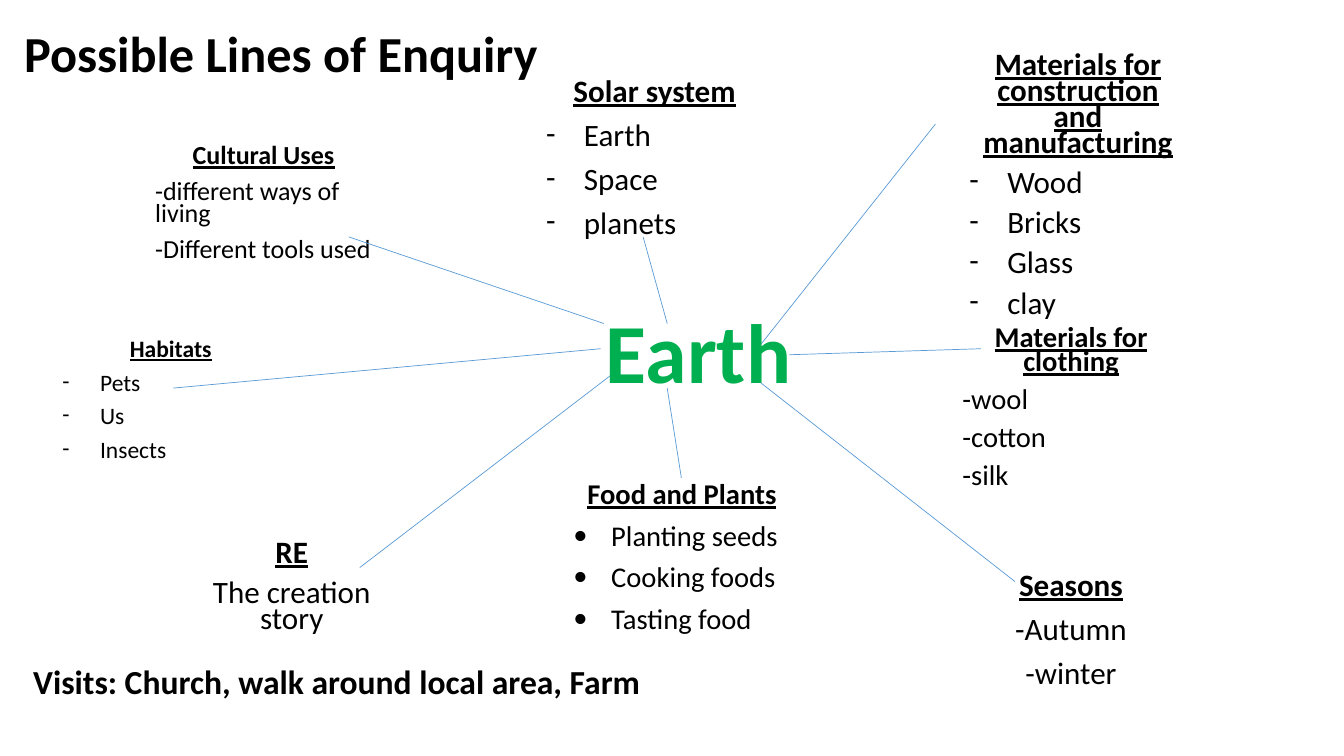
"""Build the Earth topic web: a central word, eight branches, a title and a visits line."""
from lxml import etree
from pptx import Presentation
from pptx.dml.color import RGBColor
from pptx.enum import shapes, text
from pptx.oxml.ns import qn
from pptx.util import Pt

THEME = {
    "font": "Calibri",
    "ink": RGBColor(0, 0, 0),
    "earth": RGBColor(0x00, 0xB0, 0x50),
    "line": RGBColor(0x5B, 0x9B, 0xD5),
    "earth_size": 60,
    "title_size": 36,
    "visits_size": 24,
    "line_width": 0.5,
    "space_before": 10,
    "indent": 27,
    "branch_width": 169.2,
}

LEFT, CENTER = text.PP_ALIGN.LEFT, text.PP_ALIGN.CENTER
TOP, BOTTOM = text.MSO_ANCHOR.TOP, text.MSO_ANCHOR.BOTTOM

BANNERS = [
    ("Earth", (272.9, 216.7, 452.2, 73.4), THEME["earth_size"], THEME["earth"], CENTER, BOTTOM, 0),
    ("Possible Lines of Enquiry", (10.1, 17.3, 646.6, 43.9), THEME["title_size"], THEME["ink"], LEFT, TOP, 10),
    ("Visits: Church, walk around local area, Farm", (16.6, 471.6, 646.6, 43.9), THEME["visits_size"],
     THEME["ink"], LEFT, TOP, 10),
]

BRANCHES = [
    {"heading": "Habitats", "items": ["Pets", "Us", "Insects"], "bullet": "-",
     "box": (37.4, 240.5, 100.8), "size": 16.8, "spacing": 0.7, "align": LEFT},
    {"heading": "Cultural Uses", "items": ["-different ways of living", "-Different tools used"], "bullet": None,
     "box": (103.7, 101.5, 109.4), "size": 18.6, "spacing": 0.7, "align": LEFT},
    {"heading": "Materials for clothing", "items": ["-wool", "-cotton", "-silk"], "bullet": None,
     "box": (680.4, 231.1, 130.3), "size": 20.4, "spacing": 0.7, "align": LEFT},
    {"heading": "Materials for construction and manufacturing", "items": ["Wood", "Bricks", "Glass", "clay"],
     "bullet": "-", "box": (685.4, 35.3, 177.1), "size": 22.2, "spacing": 0.7, "align": LEFT},
    {"heading": "Food and Plants", "items": ["Planting seeds", "Cooking foods", "Tasting food"], "bullet": "•",
     "box": (402.5, 341.3, 128.2), "size": 20.4, "spacing": 0.8, "align": LEFT},
    {"heading": "Solar system", "items": ["Earth", "Space", "planets"], "bullet": "-",
     "box": (383, 52.6, 130.3), "size": 22.2, "spacing": 0.8, "align": LEFT},
    {"heading": "RE", "items": ["The creation story"], "bullet": None,
     "box": (123.8, 383.8, 74.9), "size": 22.2, "spacing": 0.7, "align": CENTER},
    {"heading": "Seasons", "items": ["-Autumn", "-winter"], "bullet": None,
     "box": (680.4, 405.4, 97.2), "size": 22.2, "spacing": 0.8, "align": CENTER},
]

SPOKES = [
    ((476.6, 231.1), (459.4, 169.2)),
    ((539.3, 251.3), (668.2, 88.6)),
    ((563.8, 253.4), (700.6, 249.1)),
    ((543.6, 273.6), (725, 415.4)),
    ((476.6, 277.2), (486.7, 341.3)),
    ((438.5, 266.4), (257, 405.4)),
    ((429.1, 249.1), (123.8, 277.2)),
    ((249.1, 169.2), (431.3, 231.1)),
]


def add_box(slide, box, lines, anchor=TOP):
    """Add a wrapped text box and return its paragraphs."""
    frame = slide.shapes.add_textbox(*map(Pt, box)).text_frame
    frame.word_wrap = True
    frame.vertical_anchor = anchor
    frame.text = "\n".join(lines)
    return frame.paragraphs


def format_paragraph(paragraph, size, color, align, spacing, before, bold=False, underline=False):
    """Set the layout of a paragraph and the look of its runs."""
    paragraph.alignment = align
    paragraph.line_spacing = spacing
    paragraph.space_before = Pt(before)
    for run in paragraph.runs:
        font = run.font
        font.name, font.size, font.bold, font.underline = THEME["font"], Pt(size), bold, underline
        font.color.rgb = color


def add_bullet(paragraph, character):
    """Give a paragraph a hanging bullet."""
    properties = paragraph._p.get_or_add_pPr()
    properties.set("marL", str(Pt(THEME["indent"])))
    properties.set("indent", str(-Pt(THEME["indent"])))
    etree.SubElement(properties, qn("a:buFont")).set("typeface", THEME["font"])
    etree.SubElement(properties, qn("a:buChar")).set("char", character)


def add_branch(slide, branch):
    """Add an underlined heading with its items."""
    left, top, height = branch["box"]
    paragraphs = add_box(slide, (left, top, THEME["branch_width"], height), [branch["heading"], *branch["items"]])
    for index, paragraph in enumerate(paragraphs):
        is_heading = index == 0
        format_paragraph(paragraph, branch["size"], THEME["ink"], CENTER if is_heading else branch["align"],
                         branch["spacing"], THEME["space_before"], is_heading, is_heading)
        if branch["bullet"] and not is_heading:
            add_bullet(paragraph, branch["bullet"])


def add_spoke(slide, start, end):
    """Add a thin line between the centre and a branch."""
    spoke = slide.shapes.add_connector(shapes.MSO_CONNECTOR.STRAIGHT, *map(Pt, start + end))
    spoke.line.color.rgb = THEME["line"]
    spoke.line.width = Pt(THEME["line_width"])
    etree.SubElement(spoke._element.spPr, qn("a:effectLst"))


def main():
    """Assemble and save the slide."""
    presentation = Presentation()
    presentation.slide_width, presentation.slide_height = Pt(960), Pt(540)
    slide = presentation.slides.add_slide(presentation.slide_layouts[6])
    for branch in BRANCHES:
        add_branch(slide, branch)
    for start, end in SPOKES:
        add_spoke(slide, start, end)
    for words, box, size, color, align, anchor, before in BANNERS:
        paragraph = add_box(slide, box, [words], anchor)[0]
        format_paragraph(paragraph, size, color, align, 0.9, before, bold=True)
    presentation.save("out.pptx")


if __name__ == "__main__":
    main()
